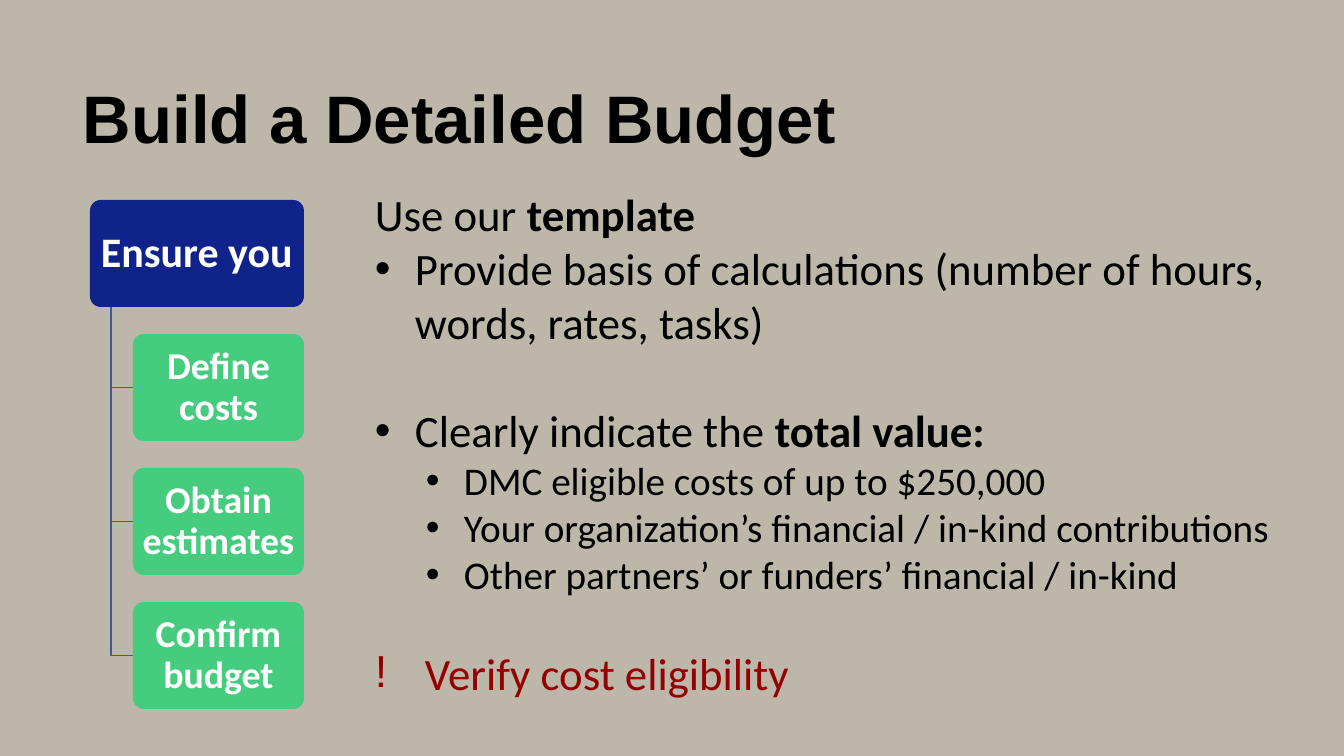
from lxml.etree import SubElement
from pptx import Presentation
from pptx.dml.color import RGBColor
from pptx.enum.shapes import MSO_SHAPE
from pptx.enum.text import MSO_ANCHOR, PP_ALIGN
from pptx.oxml.ns import qn
from pptx.util import Emu, Pt

EMU_PER_PX = 914400 / 100.8
COLORS = {
    "background": "BDB7AA",
    "text": "000000",
    "white": "FFFFFF",
    "root": "10238B",
    "step": "46CC7E",
    "branch": "365B9D",
    "warning": "920000",
}


def px(length):
    return Emu(round(length * EMU_PER_PX))


def color(name):
    return RGBColor.from_string(COLORS[name])


class SlideBuilder:
    def __init__(self, deck):
        self.page = deck.slides.add_slide(deck.slide_layouts[6])
        self.page.background.fill.solid()
        self.page.background.fill.fore_color.rgb = color("background")

    def frame(self, shape, insets, anchor=MSO_ANCHOR.TOP):
        frame = shape.text_frame
        frame.word_wrap = True
        frame.vertical_anchor = anchor
        frame.margin_left = frame.margin_right = px(insets[0])
        frame.margin_top = frame.margin_bottom = px(insets[1])
        return frame

    def span(self, para, text, size, ink="text", bold=False, font="Calibri"):
        span = para.add_run()
        span.text = text
        span.font.name = font
        span.font.size = Pt(size)
        span.font.bold = bold
        span.font.color.rgb = color(ink)

    def text_box(self, left, top, width, height, insets):
        box = self.page.shapes.add_textbox(px(left), px(top), px(width), px(height))
        return self.frame(box, insets)

    def bullet(self, para, symbol, margin, hanging):
        properties = para._p.get_or_add_pPr()
        properties.set("marL", str(px(margin)))
        properties.set("indent", str(-px(hanging)))
        if symbol == "•":
            SubElement(properties, qn("a:buFont"), typeface="Arial")
        SubElement(properties, qn("a:buChar"), char=symbol)

    def card(self, left, top, width, height, fill, text, size):
        box = self.page.shapes.add_shape(
            MSO_SHAPE.ROUNDED_RECTANGLE, px(left), px(top), px(width), px(height))
        box.adjustments[0] = 0.1
        box.shadow.inherit = False
        box.fill.solid()
        box.fill.fore_color.rgb = color(fill)
        box.line.fill.background()
        para = self.frame(box, (5, 4), MSO_ANCHOR.MIDDLE).paragraphs[0]
        para.alignment = PP_ALIGN.CENTER
        para.line_spacing = 0.9
        self.span(para, text, size, "white", bold=True)

    def branch(self, left, top, right, bottom):
        builder = self.page.shapes.build_freeform(px(left), px(top))
        builder.add_line_segments(
            [(px(left), px(bottom)), (px(right), px(bottom))], close=False)
        line = builder.convert_to_shape()
        line.shadow.inherit = False
        line.fill.background()
        line.line.color.rgb = color("branch")
        line.line.width = Pt(1)


def main():
    deck = Presentation()
    deck.slide_width, deck.slide_height = px(1344), px(756)
    slide = SlideBuilder(deck)

    # Title
    title = slide.text_box(83, 73, 827, 76, (0, 0)).paragraphs[0]
    title.line_spacing = Pt(60)
    slide.span(title, "Build a Detailed Budget", 48, bold=True, font="Arial")

    # Checklist hierarchy
    root_left, step_left, right = 90, 133, 304
    top, height, pitch = 200, 107, 134
    slide.card(root_left, top, right - root_left, height, "root", "Ensure you", 30)
    for row, text in enumerate(("Define costs", "Obtain estimates", "Confirm budget"), 1):
        step_top = top + row * pitch
        slide.branch(111, top + height, step_left, step_top + height / 2)
        slide.card(step_left, step_top, right - step_left, height, "step", text, 27)

    # Guidance: bullet (symbol, margin, hanging), size, space before, ink, spans
    main_bullet, sub_bullet, alert = ("•", 40, 40), ("•", 89, 38), ("!", 50, 50)
    guidance = [
        (None, 32, 0, "text", [("Use our ", False), ("template", True)]),
        (main_bullet, 32, 0, "text",
         [("Provide basis of calculations (number of hours, words, rates, tasks)", False)]),
        (main_bullet, 32, 39, "text",
         [("Clearly indicate the ", False), ("total value:", True)]),
        (sub_bullet, 28, 0, "text", [("DMC eligible costs of up to $250,000", False)]),
        (sub_bullet, 28, 0, "text",
         [("Your organization’s financial / in-kind contributions", False)]),
        (sub_bullet, 28, 0, "text",
         [("Other partners’ or funders’ financial / in-kind", False)]),
        (alert, 32, 34, "warning", [("Verify cost eligibility", False)]),
    ]
    frame = slide.text_box(365, 182, 919, 526, (10, 5))
    for index, (bullet, size, space, ink, spans) in enumerate(guidance):
        para = frame.add_paragraph() if index else frame.paragraphs[0]
        if bullet:
            slide.bullet(para, *bullet)
        if space:
            para.space_before = Pt(space)
        for text, bold in spans:
            slide.span(para, text, size, ink, bold)

    deck.save("out.pptx")


if __name__ == "__main__":
    main()
